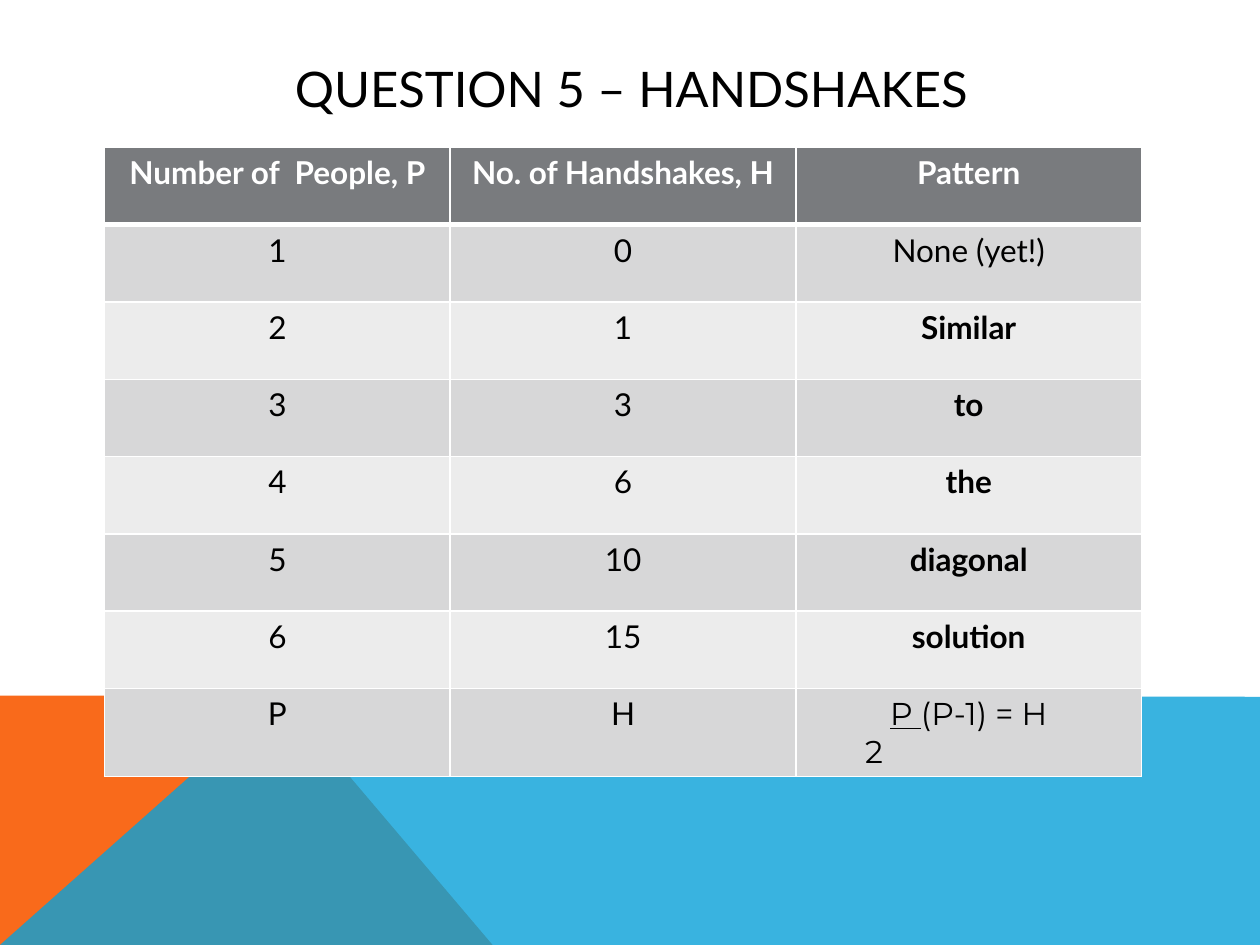
from lxml import etree
from pptx import Presentation
from pptx.dml.color import RGBColor
from pptx.enum import text
from pptx.oxml.ns import qn
from pptx.util import Inches, Pt

WHITE = RGBColor(0xFF, 0xFF, 0xFF)
BLACK = RGBColor(0, 0, 0)
ORANGE = RGBColor(0xF9, 0x6A, 0x1B)
BLUE = RGBColor(0x08, 0xA1, 0xD9)
GREY = RGBColor(0x79, 0x7B, 0x7E)
DARK = RGBColor(0xD7, 0xD7, 0xD8)
LIGHT = RGBColor(0xEC, 0xEC, 0xEC)

ROWS = [
    ("Number of  People, P", "No. of Handshakes, H", "Pattern"),
    ("1", "0", "None (yet!)"),
    ("2", "1", "Similar"),
    ("3", "3", "to"),
    ("4", "6", "the"),
    ("5", "10", "diagonal"),
    ("6", "15", "solution"),
    ("P", "H", ""),
]


def add_run(para, words, color=BLACK, **form):
    run = para.add_run()
    run.text = words
    for key, val in ({"name": "Lato", "size": Pt(18)} | form).items():
        setattr(run.font, key, val)
    run.font.color.rgb = color


def add_wedge(slide, points, color, alpha=100):
    """Draw a filled outline through points in inches, alpha in percent."""
    spots = [(Inches(x), Inches(y)) for x, y in points]
    pen = slide.shapes.build_freeform(*spots[0])
    pen.add_line_segments(spots[1:], close=True)
    shape = pen.convert_to_shape()
    shape.shadow.inherit = False
    shape.line.fill.background()
    shape.fill.solid()
    shape.fill.fore_color.rgb = color
    if alpha < 100:
        tint = shape.fill._xPr.find(".//" + qn("a:srgbClr"))
        etree.SubElement(tint, qn("a:alpha"), val=str(alpha * 1000))


def add_footer(slide, left, top, width, height):
    right, base, peak = left + width, top + height, left + 2.23
    add_wedge(slide, [(left, base), (left, top), (peak, top),
                      (left + 3.91, base)], ORANGE)
    add_wedge(slide, [(left, base), (peak, top), (right, top + 0.01),
                      (right, base)], BLUE, 80)


def add_title(slide, left, top, width, height):
    box = slide.shapes.add_textbox(*map(Inches, (left, top, width, height)))
    frame = box.text_frame
    frame.word_wrap = True
    frame.vertical_anchor = text.MSO_ANCHOR.MIDDLE
    para = frame.paragraphs[0]
    para.alignment = text.PP_ALIGN.CENTER
    add_run(para, "QUESTION 5 – HANDSHAKES", size=Pt(28))


def set_edges(cell, widths):
    """Give the cell white borders; widths maps a side letter to points."""
    props = cell._tc.get_or_add_tcPr()
    for spot, (side, width) in enumerate(widths.items()):
        line = etree.Element(qn("a:ln" + side), w=str(Pt(width)))
        fill = etree.SubElement(line, qn("a:solidFill"))
        etree.SubElement(fill, qn("a:srgbClr"), val=str(WHITE))
        props.insert(spot, line)


def add_formula(frame):
    para = frame.paragraphs[0]
    add_run(para, "P ", name="Montserrat", underline=True)
    add_run(para, "(P-1) = H", name="Montserrat")
    below = frame.add_paragraph()
    below._p.get_or_add_pPr().set("marL", str(Inches(0.45)))
    add_run(below, "2", name="Montserrat")


def add_grid(slide, left, top, width, height):
    box = map(Inches, (left, top, width, height))
    table = slide.shapes.add_table(len(ROWS), len(ROWS[0]), *box).table
    for r, row in enumerate(ROWS):
        for c, words in enumerate(row):
            cell = table.cell(r, c)
            cell.fill.solid()
            cell.fill.fore_color.rgb = (
                GREY if r == 0 else DARK if r % 2 else LIGHT)
            set_edges(cell, {"L": 1, "R": 1, "T": 3 if r == 1 else 1,
                             "B": 3 if r == 0 else 1})
            para = cell.text_frame.paragraphs[0]
            para.alignment = text.PP_ALIGN.CENTER
            if words:
                add_run(para, words, BLACK if r else WHITE,
                        bold=r == 0 or (c == 2 and r > 1))
            else:
                add_formula(cell.text_frame)


def main():
    deck = Presentation()
    deck.slide_width, deck.slide_height = Inches(10), Inches(7.5)
    slide = deck.slides.add_slide(deck.slide_layouts[6])
    add_footer(slide, 0, 5.52, 10, 1.98)
    add_title(slide, 0.9, 0.4, 8.22, 0.6)
    add_grid(slide, 0.83, 1.17, 8.23, 4.91)
    deck.save("out.pptx")


if __name__ == "__main__":
    main()
